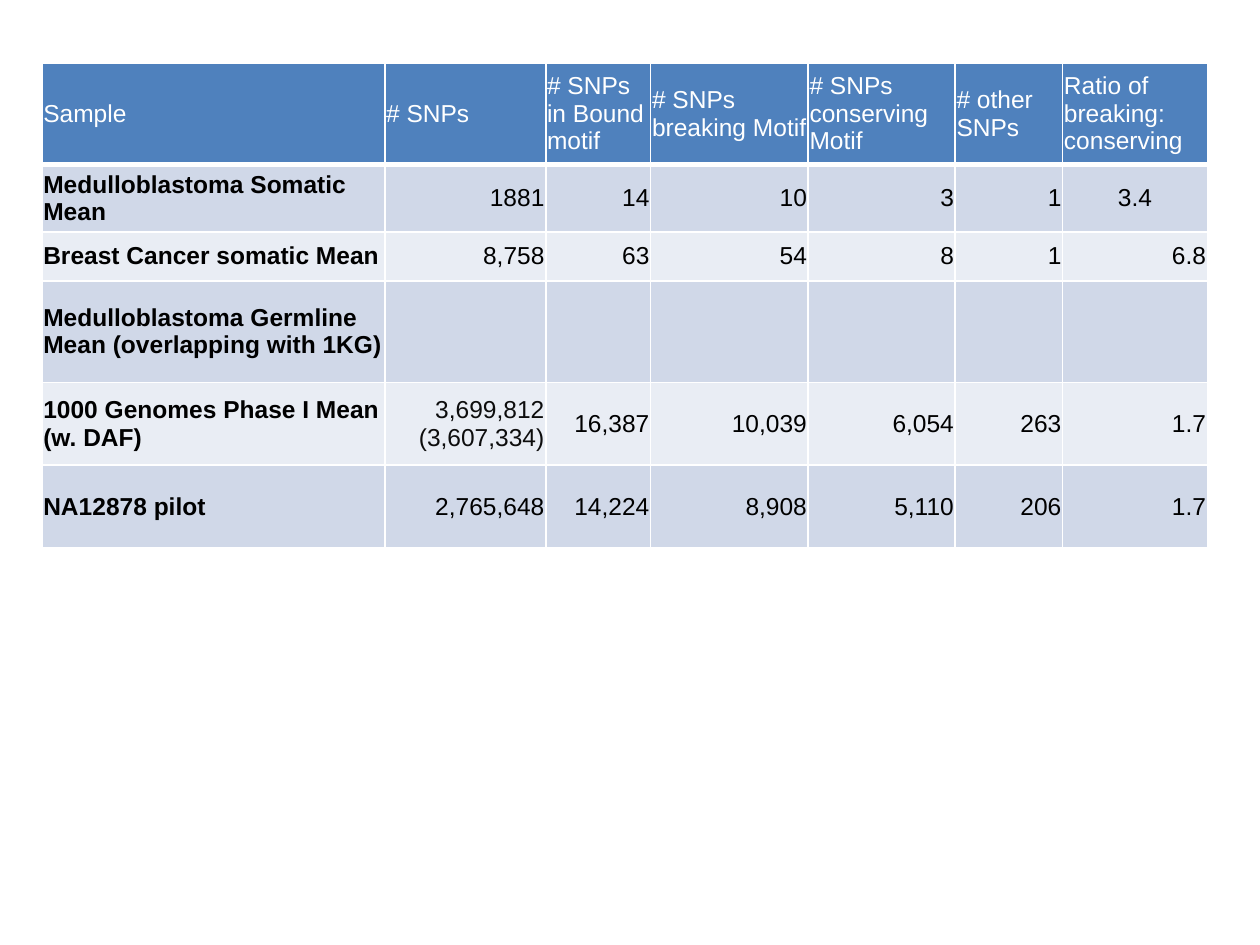
from lxml import etree
from pptx import Presentation
from pptx.dml.color import RGBColor
from pptx.enum import text
from pptx.oxml import ns
from pptx.util import Pt

HEX = {"head": "4F81BD", "odd": "D0D8E8", "even": "E9EDF4",
       "white": "FFFFFF", "black": "000000", "soft": "0D0D0D"}
ROWS = [
    ["Sample", "# SNPs", "# SNPs in Bound motif", "# SNPs breaking Motif",
     "# SNPs conserving Motif", "# other SNPs", "Ratio of breaking:\nconserving"],
    ["Medulloblastoma Somatic\nMean", "1881", "14", "10", "3", "1", "3.4"],
    ["Breast Cancer somatic Mean", "8,758", "63", "54", "8", "1", "6.8"],
    ["Medulloblastoma Germline Mean (overlapping with 1KG)"] + [""] * 6,
    ["1000 Genomes Phase I Mean (w. DAF)", "3,699,812 (3,607,334)",
     "16,387", "10,039", "6,054", "263", "1.7"],
    ["NA12878 pilot", "2,765,648", "14,224", "8,908", "5,110", "206", "1.7"],
]
WIDE = [195.9, 92, 60, 90, 84, 61.4, 82.7]
HIGH = [58, 38.6, 28, 58, 47.3, 47.3]
LEFT, TOP = 24, 36
ALIGN = text.PP_ALIGN
SOFT = (4, 1)
MID = (1, 6)


def rule(cell, side, width):
    line = etree.SubElement(cell._tc.get_or_add_tcPr(), ns.qn("a:ln" + side),
                            w=str(Pt(width)))
    fill = etree.SubElement(line, ns.qn("a:solidFill"))
    etree.SubElement(fill, ns.qn("a:srgbClr"), val=HEX["white"])


def dress(cell, row, col):
    for side in "LRTB":
        thick = (row, side) in ((0, "B"), (1, "T"))
        rule(cell, side, 3 if thick else 1)
    cell.fill.solid()
    tone = "head" if row == 0 else "odd" if row % 2 else "even"
    cell.fill.fore_color.rgb = RGBColor.from_string(HEX[tone])
    cell.margin_left = cell.margin_right = Pt(0.75)
    cell.margin_top = cell.margin_bottom = 0
    cell.vertical_anchor = text.MSO_ANCHOR.MIDDLE
    cell.text = ROWS[row][col]
    ink = "white" if row == 0 else "soft" if (row, col) == SOFT else "black"
    for para in cell.text_frame.paragraphs:
        if (row, col) == MID:
            para.alignment = ALIGN.CENTER
        else:
            para.alignment = ALIGN.RIGHT if row and col else ALIGN.LEFT
        font = para.font
        font.name, font.size = "Arial", Pt(14)
        font.bold = row > 0 and col == 0
        font.color.rgb = RGBColor.from_string(HEX[ink])


deck = Presentation()
deck.slide_width, deck.slide_height = Pt(720), Pt(540)
slide = deck.slides.add_slide(deck.slide_layouts[6])
table = slide.shapes.add_table(len(ROWS), len(WIDE), Pt(LEFT), Pt(TOP),
                               Pt(sum(WIDE)), Pt(sum(HIGH))).table
for col, width in zip(table.columns, WIDE):
    col.width = Pt(width)
for row, height in zip(table.rows, HIGH):
    row.height = Pt(height)
for row in range(len(ROWS)):
    for col in range(len(WIDE)):
        dress(table.cell(row, col), row, col)
deck.save("out.pptx")
